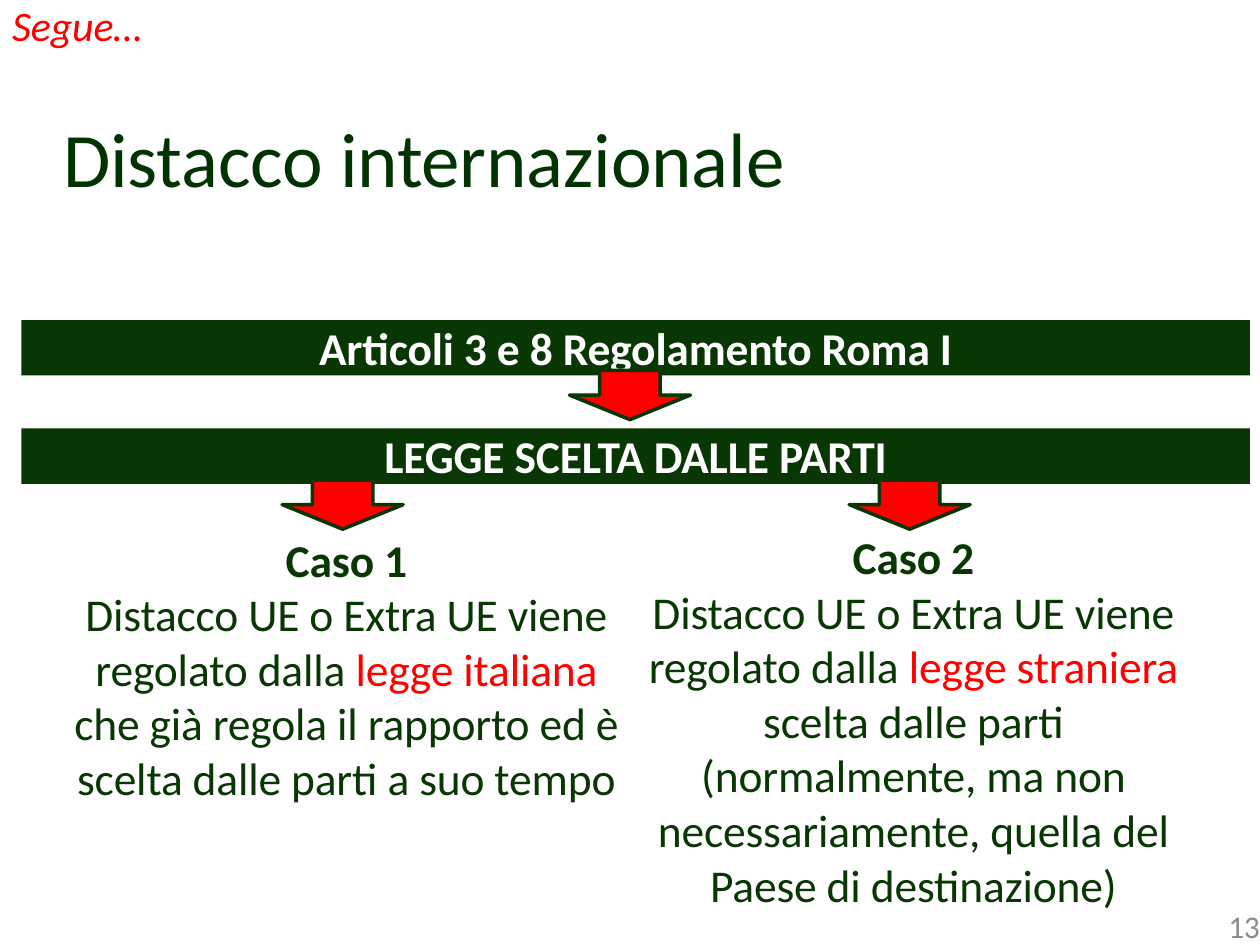
from pptx import Presentation
from pptx.dml.color import RGBColor
from pptx.enum.shapes import MSO_SHAPE
from pptx.enum.text import MSO_ANCHOR, PP_ALIGN
from pptx.util import Inches, Pt

COLORS = {"green": "093703", "title": "003300", "red": "FF0000",
          "white": "FFFFFF", "gray": "8C8C8C"}
COLS, ROWS = 100, 75


class SlideBuilder:
    font = "Calibri"
    body_size = 26

    def __init__(self, prs):
        self.cell_w = prs.slide_width / COLS
        self.cell_h = prs.slide_height / ROWS
        self.slide = prs.slides.add_slide(prs.slide_layouts[5])

    def box(self, col, row, cols, rows):
        """Turn grid columns and rows into left, top, width, height."""
        return (round(col * self.cell_w), round(row * self.cell_h),
                round(cols * self.cell_w), round(rows * self.cell_h))

    def fill_text(self, sp, paragraphs, size, align, anchor=MSO_ANCHOR.TOP):
        """Fill a shape with paragraphs, each a list of (text, color, style) runs."""
        tf = sp.text_frame
        tf.word_wrap = True
        tf.vertical_anchor = anchor
        tf.margin_left = tf.margin_right = tf.margin_top = tf.margin_bottom = 0
        for i, runs in enumerate(paragraphs):
            p = tf.add_paragraph() if i else tf.paragraphs[0]
            p.alignment = align
            for text, color, style in runs:
                r = p.add_run()
                r.text = text
                r.font.name, r.font.size = self.font, Pt(size)
                r.font.bold, r.font.italic = style == "bold", style == "italic"
                r.font.color.rgb = RGBColor.from_string(COLORS[color])
                r._r.get_or_add_rPr().set("spc", "-10")

    def title(self, text, *grid):
        sp = self.slide.shapes.title
        sp.left, sp.top, sp.width, sp.height = self.box(*grid)
        self.fill_text(sp, [[(text, "title", "")]], 44, PP_ALIGN.LEFT, MSO_ANCHOR.MIDDLE)

    def text(self, paragraphs, *grid, size=body_size, align=PP_ALIGN.CENTER):
        sp = self.slide.shapes.add_textbox(*self.box(*grid))
        self.fill_text(sp, paragraphs, size, align)

    def shape(self, kind, fill, *grid):
        sp = self.slide.shapes.add_shape(kind, *self.box(*grid))
        sp.shadow.inherit = False
        sp.fill.solid()
        sp.fill.fore_color.rgb = RGBColor.from_string(COLORS[fill])
        return sp

    def band(self, text, row):
        sp = self.shape(MSO_SHAPE.RECTANGLE, "green", 1.7, row, 97.5, 4.4)
        sp.line.fill.background()
        self.fill_text(sp, [[(text, "white", "bold")]], self.body_size, PP_ALIGN.CENTER)

    def arrow(self, center, row):
        width = 9.6
        sp = self.shape(MSO_SHAPE.DOWN_ARROW, "red", center - width / 2, row, width, 3.9)
        sp.line.color.rgb = RGBColor.from_string(COLORS["green"])
        sp.line.width = Pt(2)

    def case(self, heading, paragraphs, *grid):
        self.text([[(heading, "green", "bold")]] + paragraphs, *grid)


def main():
    prs = Presentation()
    prs.slide_width, prs.slide_height = Inches(10), Inches(7.5)
    s = SlideBuilder(prs)

    s.title("Distacco internazionale", 5, 8.7, 75.5, 7.4)
    s.text([[("13", "gray", "")]], 77, 72, 23, 3, size=18, align=PP_ALIGN.RIGHT)
    s.band("Articoli 3 e 8 Regolamento Roma I", 25.4)
    s.band("LEGGE SCELTA DALLE PARTI", 34)
    s.text([[("Segue…", "red", "italic")]], 0, 0, 11.3, 4, size=24, align=PP_ALIGN.RIGHT)
    for center, row in ((50, 29.4), (27.2, 38.1), (72.2, 38.1)):
        s.arrow(center, row)

    s.case("Caso 1", [
        [("Distacco UE o Extra UE viene", "green", "")],
        [("regolato dalla ", "green", ""),
         ("legge italiana ", "red", ""),
         ("che già regola il rapporto ed è scelta dalle parti a suo tempo", "green", "")],
    ], 5, 42.2, 45, 21.9)
    s.case("Caso 2", [
        [("Distacco UE o Extra UE viene regolato dalla ", "green", ""),
         ("legge straniera ", "red", ""),
         ("scelta dalle parti (normalmente, ma non necessariamente, "
          "quella del Paese di destinazione)", "green", "")],
    ], 50, 42, 45, 30.6)

    prs.save("out.pptx")


if __name__ == "__main__":
    main()
